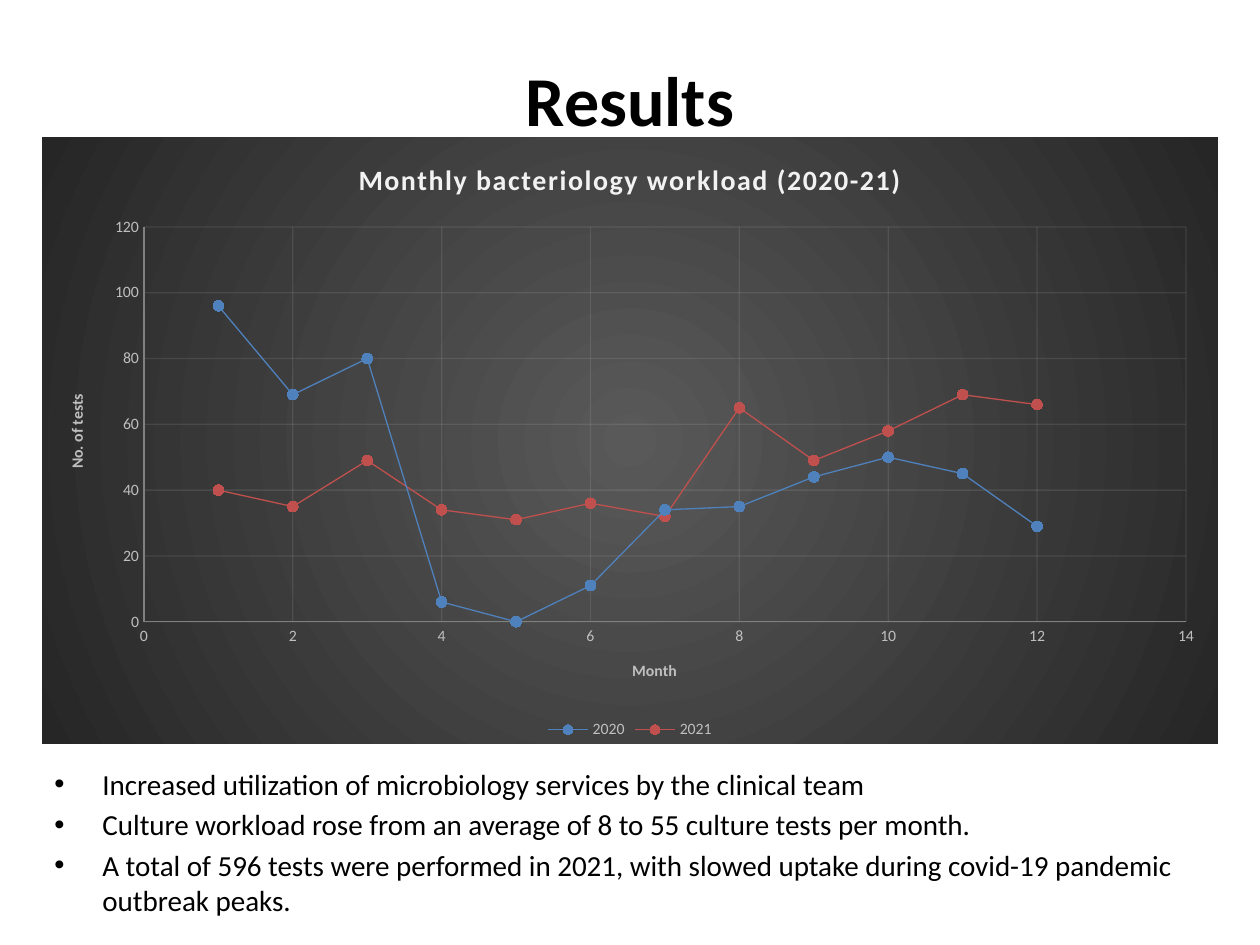
from dataclasses import dataclass

from lxml import etree
from pptx import Presentation
from pptx.chart.data import XyChartData
from pptx.dml.color import RGBColor
from pptx.enum.chart import XL_CHART_TYPE, XL_LEGEND_POSITION, XL_MARKER_STYLE, XL_TICK_MARK
from pptx.enum.text import MSO_ANCHOR, PP_ALIGN
from pptx.oxml import parse_xml
from pptx.oxml.ns import nsdecls, qn
from pptx.util import Emu, Pt

SCATTER = XL_CHART_TYPE.XY_SCATTER_SMOOTH
LEGEND_BOTTOM = XL_LEGEND_POSITION.BOTTOM
CIRCLE = XL_MARKER_STYLE.CIRCLE
NO_TICK = XL_TICK_MARK.NONE
MIDDLE = MSO_ANCHOR.MIDDLE
CENTER = PP_ALIGN.CENTER

PX_PER_INCH = 126
SLIDE_SIZE = (1260, 945)
MONTHLY_TESTS = {
    "2020": [96, 69, 80, 6, 0, 11, 34, 35, 44, 50, 45, 29],
    "2021": [40, 35, 49, 34, 31, 36, 32, 65, 49, 58, 69, 66],
}
FINDINGS = [
    "Increased utilization of microbiology services by the clinical team",
    "Culture workload rose from an average of 8 to 55 culture tests per month.",
    "A total of 596 tests were performed in 2021, with slowed uptake during "
    "covid-19 pandemic outbreak peaks.",
]


@dataclass(frozen=True)
class Theme:
    font: str = "Calibri"
    background: str = "FFFFFF"
    text: str = "000000"
    chart_title: str = "F2F2F2"
    label: str = "BFBFBF"
    axis: str = "808080"
    grid: str = "F2F2F2"
    gradient: tuple = ("595959", "262626")
    series: tuple = ("4F81BD", "C0504D")
    title_size: float = 40
    body_size: float = 16.6
    chart_title_size: float = 16
    label_size: float = 9
    line_width: float = 0.75


def px(length):
    return Emu(round(length * 914400 / PX_PER_INCH))


def set_attributes(target, values):
    for name, value in values.items():
        setattr(target, name, value)


class SlideBuilder:
    def __init__(self, slide, theme):
        self.slide = slide
        self.theme = theme
        self.paint(slide.background.fill, theme.background)

    def paint(self, fill, color):
        fill.solid()
        fill.fore_color.rgb = RGBColor.from_string(color)

    def style_font(self, font, size, color, bold=False):
        set_attributes(font, {"name": self.theme.font, "size": Pt(size), "bold": bold})
        font.color.rgb = RGBColor.from_string(color)

    def style_line(self, line, color):
        self.paint(line.fill, color)
        line.width = Pt(self.theme.line_width)

    def place(self, shape, box):
        set_attributes(shape, dict(zip(("left", "top", "width", "height"), map(px, box))))

    def title(self, text, box):
        shape = self.slide.shapes.title
        self.place(shape, box)
        shape.text_frame.vertical_anchor = MIDDLE
        paragraph = shape.text_frame.paragraphs[0]
        paragraph.alignment = CENTER
        run = paragraph.add_run()
        run.text = text
        self.style_font(run.font, self.theme.title_size, self.theme.text, bold=True)

    def bullets(self, items, box, indent):
        frame = self.slide.shapes.add_textbox(*map(px, box)).text_frame
        frame.word_wrap = True
        for index, item in enumerate(items):
            paragraph = frame.add_paragraph() if index else frame.paragraphs[0]
            paragraph.space_before = Pt(self.theme.body_size * 0.2)
            run = paragraph.add_run()
            run.text = item
            self.style_font(run.font, self.theme.body_size, self.theme.text)
            properties = paragraph._p.get_or_add_pPr()
            properties.set("marL", str(px(indent)))
            properties.set("indent", str(-px(indent)))
            etree.SubElement(properties, qn("a:buFont"), typeface="Arial")
            etree.SubElement(properties, qn("a:buChar"), char="•")

    def chart_text(self, owner, text, size, color):
        """Write a chart or axis title and return its run."""
        run = owner.text_frame.paragraphs[0].add_run()
        run.text = text
        self.style_font(run.font, size, color, bold=True)
        return run

    def axis(self, axis, title, maximum, step):
        theme = self.theme
        set_attributes(axis, {
            "minimum_scale": 0, "maximum_scale": maximum, "major_unit": step,
            "major_tick_mark": NO_TICK, "minor_tick_mark": NO_TICK,
            "has_major_gridlines": True, "has_title": True,
        })
        self.style_font(axis.tick_labels.font, theme.label_size, theme.label)
        self.style_line(axis.format.line, theme.axis)
        grid = axis.major_gridlines.format.line
        self.style_line(grid, theme.grid)
        # Gridlines are 10% opaque
        color = grid._get_or_add_ln().find(".//" + qn("a:srgbClr"))
        etree.SubElement(color, qn("a:alpha"), val="10000")
        self.chart_text(axis.axis_title, title, theme.label_size, theme.label)

    def chart_backdrop(self, chart):
        inner, outer = self.theme.gradient
        chart.element.find(qn("c:chart")).addnext(parse_xml(
            f'<c:spPr {nsdecls("c", "a")}><a:gradFill><a:gsLst>'
            f'<a:gs pos="0"><a:srgbClr val="{inner}"/></a:gs>'
            f'<a:gs pos="100000"><a:srgbClr val="{outer}"/></a:gs></a:gsLst>'
            '<a:path path="circle"><a:fillToRect l="50000" t="50000" r="50000" b="50000"/>'
            '</a:path></a:gradFill><a:ln><a:noFill/></a:ln></c:spPr>'))

    def plot_layout(self, chart, chart_box, plot_box):
        left, top, width, height = chart_box
        plot_left, plot_top, plot_width, plot_height = plot_box
        fractions = {"x": (plot_left - left) / width, "y": (plot_top - top) / height,
                     "w": plot_width / width, "h": plot_height / height}
        values = "".join(f'<c:{key} val="{value:.4f}"/>' for key, value in fractions.items())
        area = chart.element.find(".//" + qn("c:plotArea"))
        for layout in area.findall(qn("c:layout")):
            area.remove(layout)
        area.insert(0, parse_xml(
            f'<c:layout {nsdecls("c")}><c:manualLayout><c:layoutTarget val="inner"/>'
            f'<c:xMode val="edge"/><c:yMode val="edge"/>{values}</c:manualLayout></c:layout>'))

    def scatter(self, title, data, box, plot_box):
        theme = self.theme
        chart_data = XyChartData()
        for name, values in data.items():
            series = chart_data.add_series(name)
            for month, tests in enumerate(values, 1):
                series.add_data_point(month, tests)
        chart = self.slide.shapes.add_chart(SCATTER, *map(px, box), chart_data).chart
        self.style_font(chart.font, theme.label_size, theme.label)
        set_attributes(chart, {"has_title": True, "has_legend": True})
        run = self.chart_text(chart.chart_title, title, theme.chart_title_size, theme.chart_title)
        run.font._element.set("spc", "100")
        chart.chart_title.include_in_layout = False
        set_attributes(chart.legend, {"position": LEGEND_BOTTOM, "include_in_layout": False})
        self.style_font(chart.legend.font, theme.label_size, theme.label)
        self.axis(chart.category_axis, "Month", 14, 2)
        self.axis(chart.value_axis, "No. of tests", 120, 20)
        plot = chart.plots[0]
        plot.vary_by_categories = False
        for series, color in zip(plot.series, theme.series):
            series.smooth = True
            self.style_line(series.format.line, color)
            set_attributes(series.marker, {"style": CIRCLE, "size": 6})
            self.paint(series.marker.format.fill, color)
            self.style_line(series.marker.format.line, color)
        self.chart_backdrop(chart)
        self.plot_layout(chart, box, plot_box)


def main():
    presentation = Presentation()
    presentation.slide_width, presentation.slide_height = map(px, SLIDE_SIZE)
    title_only = presentation.slide_layouts[5]
    builder = SlideBuilder(presentation.slides.add_slide(title_only), Theme())

    # Heading
    builder.title("Results", (63, 38, 1134, 120))
    # Findings below the chart
    builder.bullets(FINDINGS, (42, 760, 1218, 185), indent=48)
    # Monthly workload chart
    builder.scatter("Monthly bacteriology workload (2020-21)", MONTHLY_TESTS,
                    (42, 137, 1176, 607), (144, 227, 1042, 395))

    presentation.save("out.pptx")


if __name__ == "__main__":
    main()
